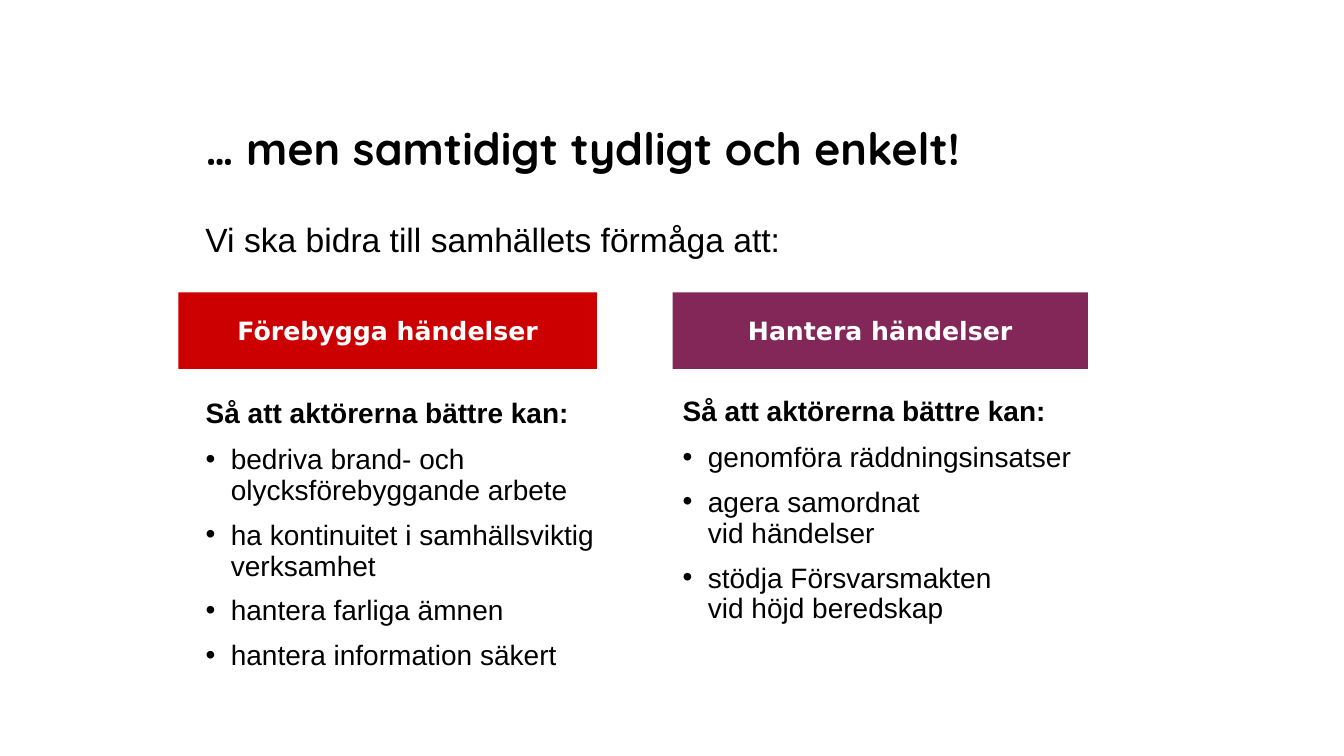
import dataclasses

import lxml.etree
import pptx
import pptx.dml.color
import pptx.enum.shapes
import pptx.enum.text
import pptx.oxml.ns
import pptx.util

PT = pptx.util.Pt
ALIGN = pptx.enum.text.PP_ALIGN
ANCHOR = pptx.enum.text.MSO_ANCHOR


@dataclasses.dataclass(frozen=True)
class Theme:
    """Colours, typefaces and type sizes of the slide."""

    ink: str = "000000"
    paper: str = "FFFFFF"
    prevent: str = "CC0000"
    handle: str = "822757"
    display: str = "Quicksand"
    text: str = "Arial"
    label: str = "DejaVu Sans"
    title_size: int = 32
    intro_size: int = 24
    body_size: int = 20
    label_size: int = 18


class SlideBuilder:
    """Draws elements on one slide, placed in percent of its size."""

    def __init__(self, deck, theme):
        """Add a comparison slide to the deck."""
        self.deck = deck
        self.theme = theme
        self.slide = deck.slides.add_slide(deck.slide_layouts[4])

    def scale(self, area):
        """Turn percentages into slide lengths."""
        sides = (self.deck.slide_width, self.deck.slide_height) * 2
        return [round(side * share / 100) for side, share in zip(sides, area)]

    def assign(self, target, values):
        """Set every attribute in a dict of format values."""
        for name, value in values.items():
            setattr(target, name, value)

    def fill_text(self, shape, lines, font, color, frame=None, layout=None, bullet=False):
        """Fill a shape with formatted paragraphs."""
        text = shape.text_frame
        self.assign(text, {
            "word_wrap": True,
            "auto_size": pptx.enum.text.MSO_AUTO_SIZE.NONE,
            "vertical_anchor": ANCHOR.TOP,
            **(frame or {}),
        })
        for index, line in enumerate(lines):
            paragraph = text.add_paragraph() if index else text.paragraphs[0]
            paragraph.text = line
            self.assign(paragraph, {
                "alignment": ALIGN.LEFT,
                "space_before": PT(10 if index else 0),
                **(layout or {}),
            })
            if bullet:
                self.add_bullet(paragraph)
            for run in paragraph.runs:
                self.assign(run.font, font)
                run.font.color.rgb = pptx.dml.color.RGBColor.from_string(color)

    def add_bullet(self, paragraph):
        """Give a paragraph a hanging round bullet."""
        properties = paragraph._p.get_or_add_pPr()
        indent = pptx.util.Inches(0.25)
        properties.set("marL", str(indent))
        properties.set("indent", str(-indent))
        mark = lxml.etree.SubElement(properties, pptx.oxml.ns.qn("a:buChar"))
        mark.set("char", "•")

    def placeholder(self, index, area):
        """Move a template placeholder and return it."""
        holder = self.slide.placeholders[index]
        self.assign(holder, dict(zip(("left", "top", "width", "height"), self.scale(area))))
        return holder

    def title(self, wording, area):
        """Set the slide title."""
        font = {"name": self.theme.display, "size": PT(self.theme.title_size), "bold": True}
        self.fill_text(self.placeholder(0, area), [wording], font, self.theme.ink,
                       layout={"line_spacing": 0.9})

    def intro(self, wording, area):
        """Add the introductory sentence."""
        font = {"name": self.theme.text, "size": PT(self.theme.intro_size)}
        self.fill_text(self.slide.shapes.add_textbox(*self.scale(area)), [wording], font,
                       self.theme.ink, layout={"line_spacing": PT(28)})

    def heading(self, index, wording, area):
        """Set the bold line above a list."""
        font = {"name": self.theme.text, "size": PT(self.theme.body_size), "bold": True}
        self.fill_text(self.placeholder(index, area), [wording], font, self.theme.ink)

    def bullets(self, index, points, area):
        """Set a bulleted list."""
        font = {"name": self.theme.text, "size": PT(self.theme.body_size), "bold": False}
        self.fill_text(self.placeholder(index, area), points, font, self.theme.ink,
                       layout={"line_spacing": PT(22)}, bullet=True)

    def banner(self, wording, color, area):
        """Draw a filled bar with a centred label."""
        bar = self.slide.shapes.add_shape(
            pptx.enum.shapes.MSO_SHAPE.RECTANGLE, *self.scale(area))
        bar.shadow.inherit = False
        bar.fill.solid()
        bar.fill.fore_color.rgb = pptx.dml.color.RGBColor.from_string(color)
        bar.line.fill.background()
        font = {"name": self.theme.label, "size": PT(self.theme.label_size), "bold": True}
        inset = pptx.util.Inches(0.2)
        frame = {"vertical_anchor": ANCHOR.MIDDLE, "margin_left": inset, "margin_right": inset}
        self.fill_text(bar, [wording], font, self.theme.paper, frame,
                       {"alignment": ALIGN.CENTER})


def main():
    """Build and save the slide."""
    deck = pptx.Presentation()
    deck.slide_width = pptx.util.Inches(13.33)
    deck.slide_height = pptx.util.Inches(7.5)
    theme = Theme()
    page = SlideBuilder(deck, theme)
    margin, middle, column = 14.55, 50.04, 33.91

    page.title("… men samtidigt tydligt och enkelt!", (margin, 16.13, 70.37, 14.13))
    page.intro("Vi ska bidra till samhällets förmåga att:", (margin, 28.4, 67.52, 6.53))

    goals = [
        ("Förebygga händelser", theme.prevent, 13.28, 31.13, margin, 51.6, [
            "bedriva brand- och olycksförebyggande arbete",
            "ha kontinuitet i samhällsviktig verksamhet",
            "hantera farliga ämnen",
            "hantera information säkert",
        ]),
        ("Hantera händelser", theme.handle, middle, 30.91, middle, 51.33, [
            "genomföra räddningsinsatser",
            "agera samordnat \vvid händelser",
            "stödja Försvarsmakten \vvid höjd beredskap",
        ]),
    ]
    for order, (goal, color, bar_left, bar_width, left, top, abilities) in enumerate(goals):
        page.banner(goal, color, (bar_left, 38.67, bar_width, 10.13))
        page.heading(1 + 2 * order, "Så att aktörerna bättre kan:", (left, top, column, 6.53))
        page.bullets(2 + 2 * order, abilities, (left, top + 6.53, column, 49.07))

    deck.save("out.pptx")


if __name__ == "__main__":
    main()
